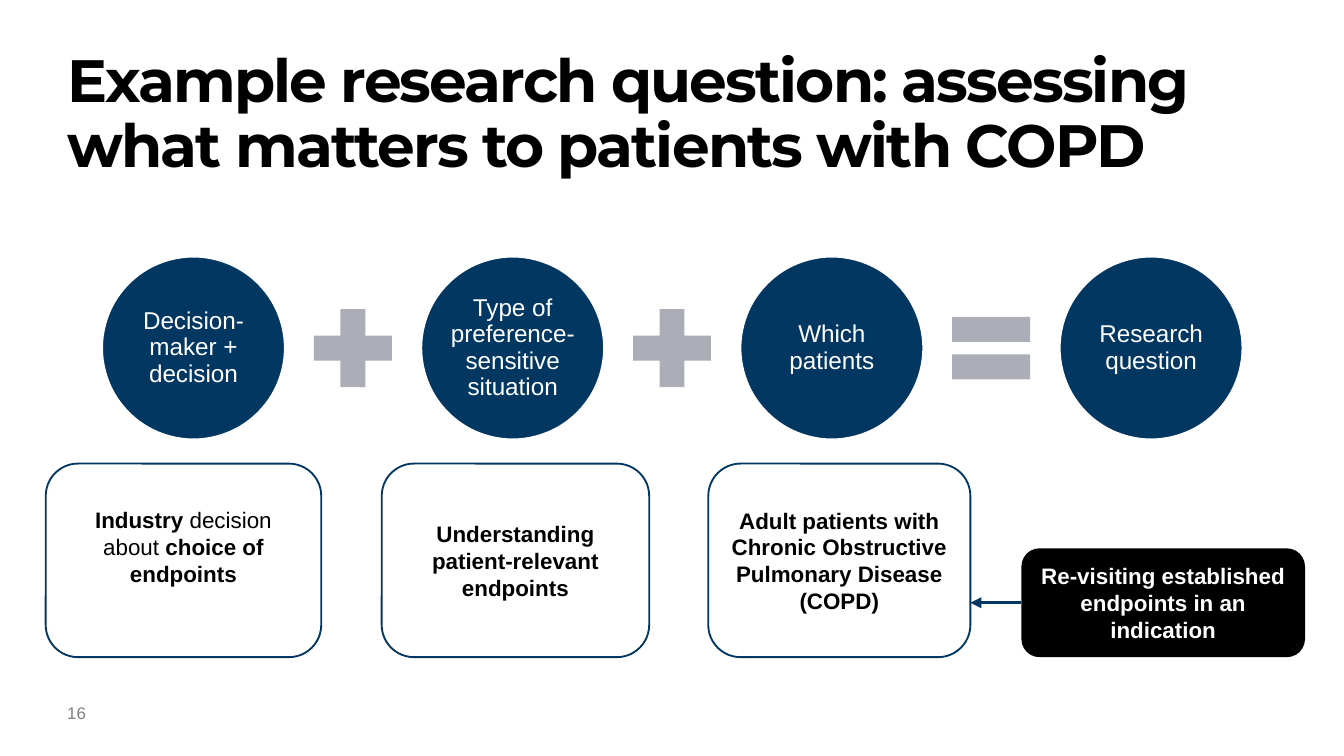
from lxml import etree
from pptx import Presentation
from pptx.dml.color import RGBColor
from pptx.enum import shapes, text
from pptx.oxml import ns
from pptx.util import Inches, Pt

NAVY = RGBColor(0x02, 0x37, 0x61)
GREY = RGBColor(0xAB, 0xAE, 0xB7)
DIM = RGBColor(0x7F, 0x7F, 0x7F)
BLACK = RGBColor(0, 0, 0)
WHITE = RGBColor(255, 255, 255)
KIND = shapes.MSO_SHAPE

TITLE = "Example research question: assessing what matters to patients with COPD"
PAGE = "16"
STEPS = ["Decision-maker + decision", "Type of preference-sensitive situation",
         "Which patients", "Research question"]
SIGNS = [KIND.MATH_PLUS, KIND.MATH_PLUS, KIND.MATH_EQUAL]
# left, width, bottom inset, runs as (text, bold)
CARDS = [
    (0.34, 2.05, 0.25, [("Industry", True), (" decision about ", False),
                        ("choice of endpoints", True)]),
    (2.84, 1.99, 0.05, [("Understanding patient-relevant endpoints", True)]),
    (5.27, 1.95, 0.05, [("Adult patients with Chronic Obstructive "
                         "Pulmonary Disease (COPD)", True)]),
]
NOTE = [("Re-visiting established endpoints in an indication", True)]

WIDE = 10
HIGH = WIDE * 9 / 16
PITCH = 9.5 / 4
DISC, DISC_X, DISC_Y = 1.36, 0.76, 1.91
SIGN, SIGN_X = 0.79, 2.23
CARD_Y, CARD_H = 3.45, 1.44
NOTE_X, NOTE_W, NOTE_H = 7.6, 2.11, 0.81


def write(shape, runs, size, color, face="Arial", inset=(0, 0, 0, 0),
          anchor=text.MSO_ANCHOR.MIDDLE, align=text.PP_ALIGN.CENTER, lead=1.0):
    """Fill a shape with one paragraph; inset is left, top, right, bottom."""
    frame = shape.text_frame
    frame.word_wrap = True
    frame.auto_size = text.MSO_AUTO_SIZE.NONE
    frame.vertical_anchor = anchor
    (frame.margin_left, frame.margin_top,
     frame.margin_right, frame.margin_bottom) = map(Inches, inset)
    para = frame.paragraphs[0]
    para.alignment, para.line_spacing = align, lead
    for words, bold in runs:
        run = para.add_run()
        run.text = words
        font = run.font
        font.name, font.size, font.bold = face, Pt(size), bold
        font.color.rgb = color
    return para


def draw(slide, kind, box, fill, line=None):
    shape = slide.shapes.add_shape(kind, *map(Inches, box))
    shape.shadow.inherit = False
    shape.fill.solid()
    shape.fill.fore_color.rgb = fill
    if line is None:
        shape.line.fill.background()
    else:
        shape.line.color.rgb = line
        shape.line.width = Pt(1)
    return shape


def arrow(slide, start, end):
    link = slide.shapes.add_connector(
        shapes.MSO_CONNECTOR.STRAIGHT, *map(Inches, start + end))
    link.line.color.rgb = NAVY
    link.line.width = Pt(1.5)
    props = link._element.spPr
    tip = etree.SubElement(props.find(ns.qn("a:ln")), ns.qn("a:tailEnd"))
    tip.set("type", "triangle")
    etree.SubElement(props, ns.qn("a:effectLst"))


def main():
    deck = Presentation()
    deck.slide_width, deck.slide_height = Inches(WIDE), Inches(HIGH)
    slide = deck.slides.add_slide(deck.slide_layouts[5])
    top, left = text.MSO_ANCHOR.TOP, text.PP_ALIGN.LEFT

    title = slide.shapes.title
    title.left, title.top = Inches(0.5), Inches(0.38)
    title.width, title.height = Inches(9), Inches(1.05)
    para = write(title, [(TITLE, True)], 32, BLACK, "Montserrat",
                 anchor=top, align=left, lead=0.9)
    para.runs[0].font._element.set("spc", "-100")

    page = slide.shapes.add_textbox(*map(Inches, (0.5, 5.23, 0.25, 0.25)))
    write(page, [(PAGE, False)], 9, DIM, anchor=top, align=left)

    for i, step in enumerate(STEPS):
        box = (DISC_X + i * PITCH, DISC_Y, DISC, DISC)
        disc = draw(slide, KIND.OVAL, box, NAVY, WHITE)
        write(disc, [(step, False)], 13, WHITE, inset=(0.02,) * 4, lead=0.9)
    for i, kind in enumerate(SIGNS):
        y = DISC_Y + (DISC - SIGN) / 2
        draw(slide, kind, (SIGN_X + i * PITCH, y, SIGN, SIGN), GREY)

    for x, wide, low, runs in CARDS:
        card = draw(slide, KIND.ROUNDED_RECTANGLE, (x, CARD_Y, wide, CARD_H), WHITE, NAVY)
        write(card, runs, 12, BLACK, inset=(0.1, 0.05, 0.1, low))

    note_y = CARD_Y + CARD_H - NOTE_H
    note = draw(slide, KIND.ROUNDED_RECTANGLE, (NOTE_X, note_y, NOTE_W, NOTE_H), BLACK)
    write(note, NOTE, 12, WHITE, inset=(0.1, 0.05, 0.1, 0.05))
    mid = note_y + NOTE_H / 2
    edge = CARDS[-1][0] + CARDS[-1][1]
    arrow(slide, (NOTE_X, mid), (edge, mid))

    deck.save("out.pptx")


if __name__ == "__main__":
    main()
